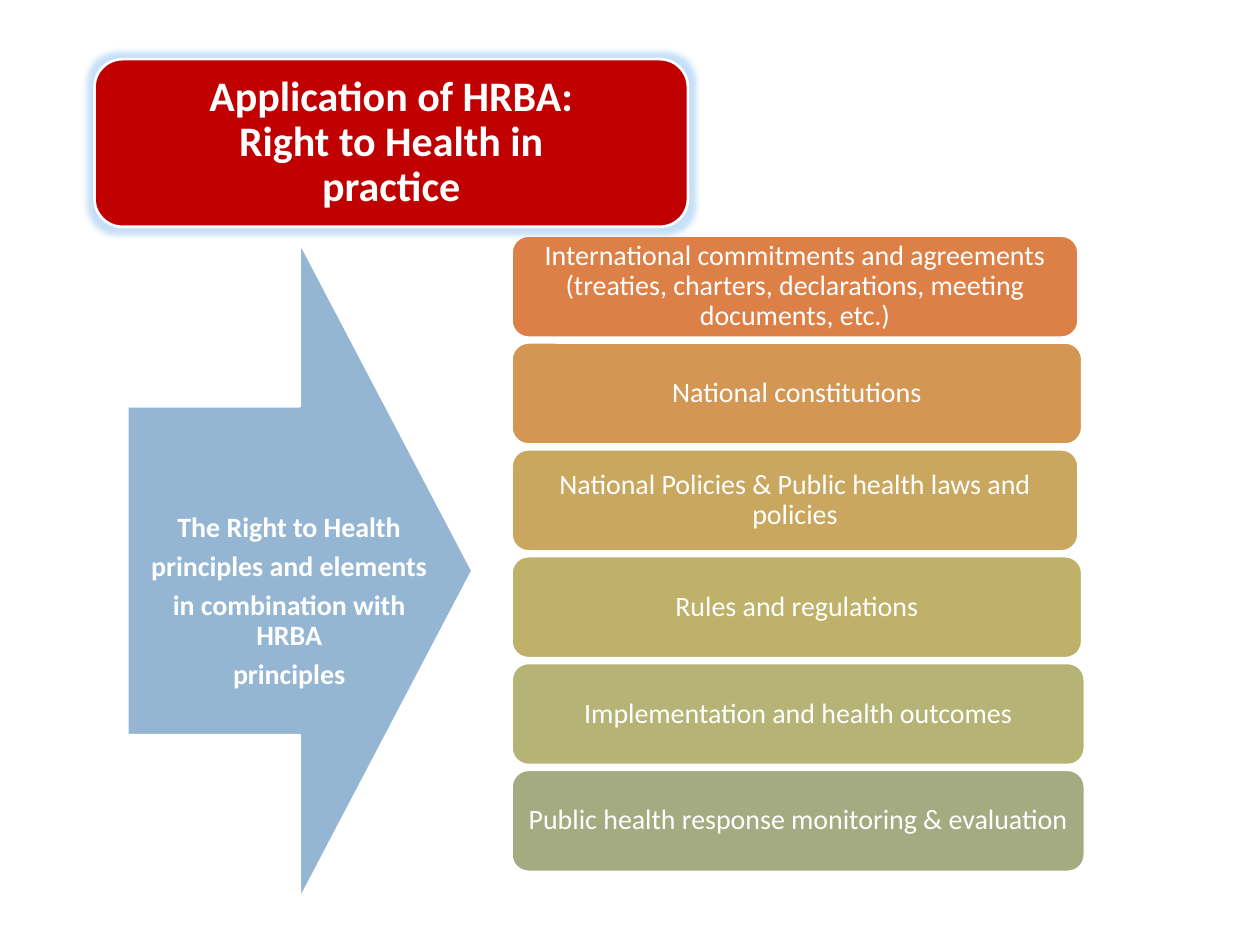
from dataclasses import dataclass

from lxml.etree import SubElement
from pptx import Presentation
from pptx.dml.color import RGBColor
from pptx.enum.shapes import MSO_SHAPE
from pptx.enum.text import MSO_ANCHOR, PP_ALIGN
from pptx.oxml.ns import qn
from pptx.util import Inches, Pt


@dataclass(frozen=True)
class Theme:
    font: str = "Calibri"
    white: str = "FFFFFF"
    title: str = "C00000"
    glow: str = "6FB2EA"
    arrow: str = "94B6D2"
    body_size: int = 16
    title_size: int = 24
    gap: int = 5
    line: float = 1.5


THEME = Theme()

TITLE = "Application of HRBA: Right to Health in practice"
AIMS = [
    "The Right to Health",
    "principles and elements",
    "in combination with HRBA",
    "principles",
]
# Text, fill and width in inches of each step
STEPS = [
    ("International commitments and agreements (treaties, charters, "
     "declarations, meeting documents, etc.)", "DD8047", 4.5),
    ("National constitutions", "D39753", 4.53),
    ("National Policies & Public health laws and policies", "C9A75F", 4.5),
    ("Rules and regulations", "BFB16A", 4.53),
    ("Implementation and health outcomes", "B5B476", 4.55),
    ("Public health response monitoring & evaluation", "A5AB81", 4.55),
]


def add_block(slide, kind, box, fill):
    shape = slide.shapes.add_shape(kind, *map(Inches, box))
    shape.shadow.inherit = False
    shape.fill.solid()
    shape.fill.fore_color.rgb = RGBColor.from_string(fill)
    shape.line.color.rgb = RGBColor.from_string(THEME.white)
    shape.line.width = Pt(THEME.line)
    return shape


def set_text(shape, lines, size, inset, bold=False):
    """Fill a shape with centred lines; inset is (side, top) in inches."""
    frame = shape.text_frame
    frame.word_wrap = True
    frame.vertical_anchor = MSO_ANCHOR.MIDDLE
    frame.margin_left = frame.margin_right = Inches(inset[0])
    frame.margin_top = frame.margin_bottom = Inches(inset[1])
    frame.text = "\n".join(lines)
    for para in frame.paragraphs:
        para.alignment = PP_ALIGN.CENTER
        para.line_spacing = 0.9
        para.space_after = Pt(THEME.gap)
        para.font.name = THEME.font
        para.font.size = Pt(size)
        para.font.bold = bold
        para.font.color.rgb = RGBColor.from_string(THEME.white)


def add_glow(shape, color, radius):
    effects = shape._element.spPr.find(qn("a:effectLst"))
    glow = SubElement(effects, qn("a:glow"), rad=str(Inches(radius)))
    tint = SubElement(glow, qn("a:srgbClr"), val=color)
    SubElement(tint, qn("a:alpha"), val="40000")


def add_steps(slide, left, top, height):
    """Stack the steps evenly from top within the given height."""
    tall = 0.81
    pitch = (height - tall) / (len(STEPS) - 1)
    for row, (text, fill, width) in enumerate(STEPS):
        box = (left, top + row * pitch, width, tall)
        step = add_block(slide, MSO_SHAPE.ROUNDED_RECTANGLE, box, fill)
        set_text(step, [text], THEME.body_size, (0.07, 0.03))


def add_arrow(slide, left, top, width, height):
    add_block(slide, MSO_SHAPE.RIGHT_ARROW,
              (left, top, width, height), THEME.arrow)
    drop = 0.5
    area = (left + 0.16, top + drop, width - 0.49, height - drop)
    label = slide.shapes.add_textbox(*map(Inches, area))
    set_text(label, AIMS, THEME.body_size, (0, 0.18), bold=True)


def add_title(slide, *box):
    title = add_block(slide, MSO_SHAPE.ROUNDED_RECTANGLE, box, THEME.title)
    add_glow(title, THEME.glow, 0.09)
    set_text(title, [TITLE], THEME.title_size, (0.51, 0.04), bold=True)


def main():
    deck = Presentation()
    deck.slide_width, deck.slide_height = Inches(10), Inches(7.5)
    slide = deck.slides.add_slide(deck.slide_layouts[6])
    add_steps(slide, 4.06, 1.87, 5.05)
    add_arrow(slide, 1.01, 1.92, 2.74, 5.22)
    add_title(slide, 0.75, 0.47, 4.71, 1.33)
    deck.save("out.pptx")


if __name__ == "__main__":
    main()
